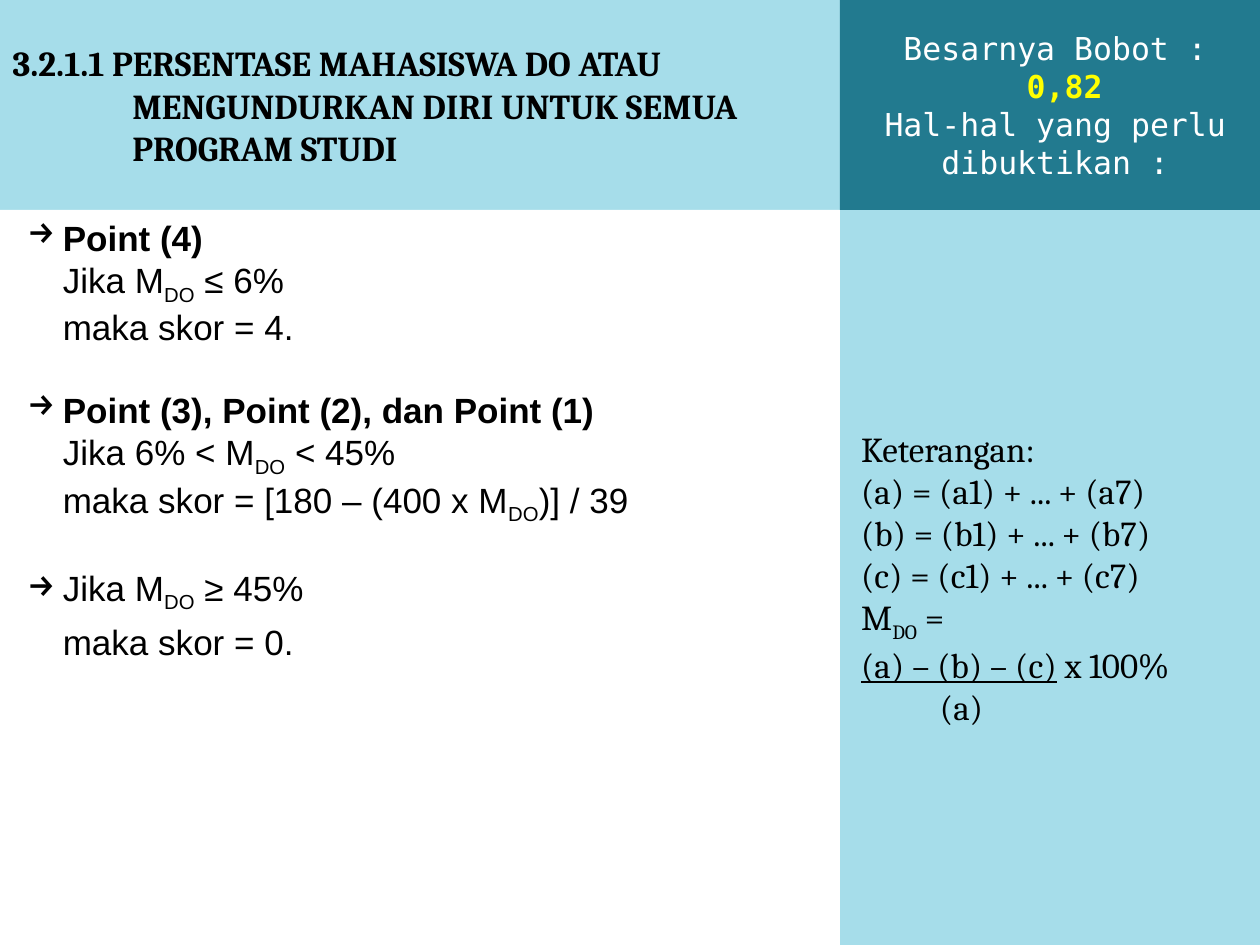
from dataclasses import dataclass

from lxml import etree
from pptx import Presentation
from pptx.dml.color import RGBColor
from pptx.enum.shapes import MSO_SHAPE
from pptx.enum.text import MSO_ANCHOR, MSO_AUTO_SIZE, PP_ALIGN
from pptx.oxml.ns import qn
from pptx.util import Pt

RECT = MSO_SHAPE.RECTANGLE
TOP, MIDDLE = MSO_ANCHOR.TOP, MSO_ANCHOR.MIDDLE
LEFT, CENTER = PP_ALIGN.LEFT, PP_ALIGN.CENTER
NO_FIT = MSO_AUTO_SIZE.NONE
TITLE_ONLY = 5


@dataclass(frozen=True)
class Theme:
    pale: str = "A6DDEA"
    teal: str = "227A8F"
    white: str = "FFFFFF"
    black: str = "000000"
    yellow: str = "FFFF00"
    serif: str = "Cambria"
    sans: str = "Arial"
    mono: str = "DejaVu Sans Mono"
    size: float = 20
    small: float = 18


@dataclass(frozen=True)
class Run:
    text: str
    bold: bool = False
    sub: bool = False
    line: bool = False
    color: str = ""


@dataclass(frozen=True)
class Para:
    runs: tuple[Run, ...]
    margin: float = 0
    indent: float = 0
    before: float = 0
    bullet: str = ""


@dataclass(frozen=True)
class Box:
    left: float
    top: float
    width: float
    height: float
    fill: str


THEME = Theme()
WIDTH, HEIGHT = 720, 540
SPLIT, HEAD = 480, 120
HANG = 68.4
STEP, MARK = 28.8, 20.16
GAP = 23
DO = Run("DO", sub=True)

TITLE_BOX = Box(0, 0, SPLIT, HEAD, THEME.pale)
NOTE_BOX = Box(SPLIT, HEAD, WIDTH - SPLIT, HEIGHT - HEAD, THEME.pale)
SCORE_BOX = Box(0, HEAD, SPLIT, HEIGHT - HEAD, THEME.white)
WEIGHT_BOX = Box(SPLIT, 0, 246, HEAD, THEME.teal)


def point(*runs: Run, before: float = 0) -> Para:
    return Para(runs, STEP, -MARK, before, "→")


def rule(*runs: Run, before: float = 0) -> Para:
    return Para(runs, STEP, 0, before)


def note(*runs: Run, indent: float = 5) -> Para:
    return Para(runs, indent=indent)


TITLE = [Para((Run("3.2.1.1 PERSENTASE MAHASISWA DO ATAU MENGUNDURKAN DIRI "
                   "UNTUK SEMUA PROGRAM STUDI", bold=True),), HANG, -HANG)]
SCORES = [
    point(Run("Point (4)", bold=True)),
    rule(Run("Jika M"), DO, Run(" ≤ 6%")),
    rule(Run("maka skor = 4.")),
    point(Run("Point (3), Point (2), dan Point (1)", bold=True), before=GAP),
    rule(Run("Jika 6% < M"), DO, Run(" < 45%")),
    rule(Run("maka skor = [180 – (400 x M"), DO, Run(")] / 39")),
    point(Run("Jika M"), DO, Run(" ≥ 45%"), before=GAP),
    rule(Run("maka skor = 0."), before=4),
]
NOTES = [
    note(Run("Keterangan:")),
    *(note(Run(f"({x}) = ({x}1) + ... + ({x}7)")) for x in "abc"),
    note(Run("M"), DO, Run(" =")),
    note(Run("(a) – (b) – (c)", line=True), Run(" x 100%")),
    note(Run("(a)"), indent=50),
]
WEIGHT = [
    Para((Run("Besarnya Bobot :"),)),
    Para((Run("0,82", bold=True, color=THEME.yellow),), indent=10.8),
    Para((Run("Hal-hal yang perlu dibuktikan :"),)),
]


def write(shape, paras: list[Para], *, font: str, size: float = THEME.size,
          color: str = THEME.black, align=LEFT, anchor=MIDDLE) -> None:
    frame = shape.text_frame
    frame.word_wrap = True
    frame.auto_size = NO_FIT
    frame.vertical_anchor = anchor
    for i, item in enumerate(paras):
        para = frame.add_paragraph() if i else frame.paragraphs[0]
        props = para._p.get_or_add_pPr()
        props.set("marL", str(Pt(item.margin)))
        props.set("indent", str(Pt(item.indent)))
        if item.bullet:
            etree.SubElement(props, qn("a:buChar"), char=item.bullet)
        para.alignment = align
        para.space_before = Pt(item.before)
        for part in item.runs:
            run = para.add_run()
            run.text = part.text
            face = run.font
            face.name, face.size = font, Pt(size)
            face.bold, face.underline = part.bold, part.line
            face.color.rgb = RGBColor.from_string(part.color or color)
            if part.sub:
                run._r.get_or_add_rPr().set("baseline", "-25000")


def paint(shape, color: str) -> None:
    shape.fill.solid()
    shape.fill.fore_color.rgb = RGBColor.from_string(color)


def panel(slide, box: Box):
    shape = slide.shapes.add_shape(RECT, Pt(box.left), Pt(box.top),
                                   Pt(box.width), Pt(box.height))
    shape.shadow.inherit = False
    shape.line.fill.background()
    paint(shape, box.fill)
    return shape


def head(slide, box: Box):
    """Move and fill the title placeholder."""
    shape = slide.shapes.title
    shape.left, shape.top = Pt(box.left), Pt(box.top)
    shape.width, shape.height = Pt(box.width), Pt(box.height)
    paint(shape, box.fill)
    return shape


def main() -> None:
    deck = Presentation()
    deck.slide_width, deck.slide_height = Pt(WIDTH), Pt(HEIGHT)
    slide = deck.slides.add_slide(deck.slide_layouts[TITLE_ONLY])
    write(head(slide, TITLE_BOX), TITLE, font=THEME.serif)
    write(panel(slide, NOTE_BOX), NOTES, font=THEME.serif)
    write(panel(slide, SCORE_BOX), SCORES, font=THEME.sans, anchor=TOP)
    write(panel(slide, WEIGHT_BOX), WEIGHT, font=THEME.mono,
          size=THEME.small, color=THEME.white, align=CENTER)
    deck.save("out.pptx")


if __name__ == "__main__":
    main()
